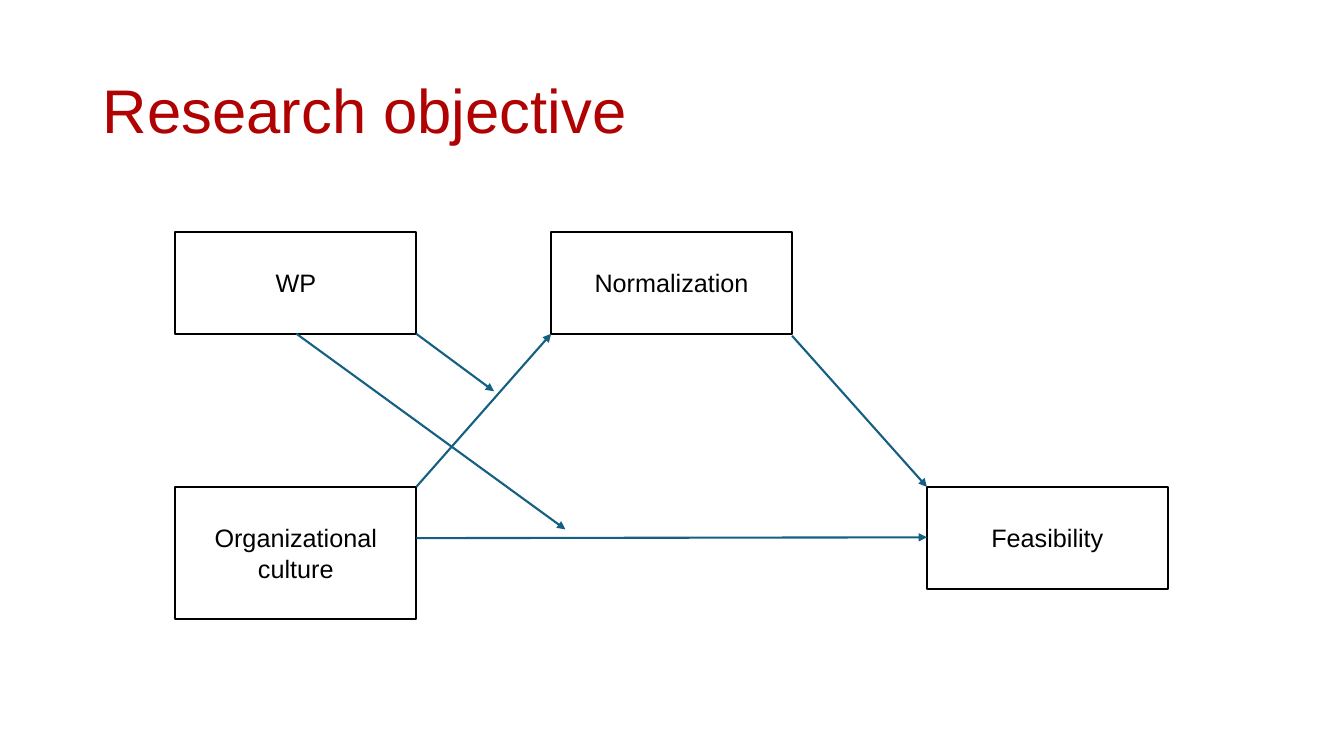
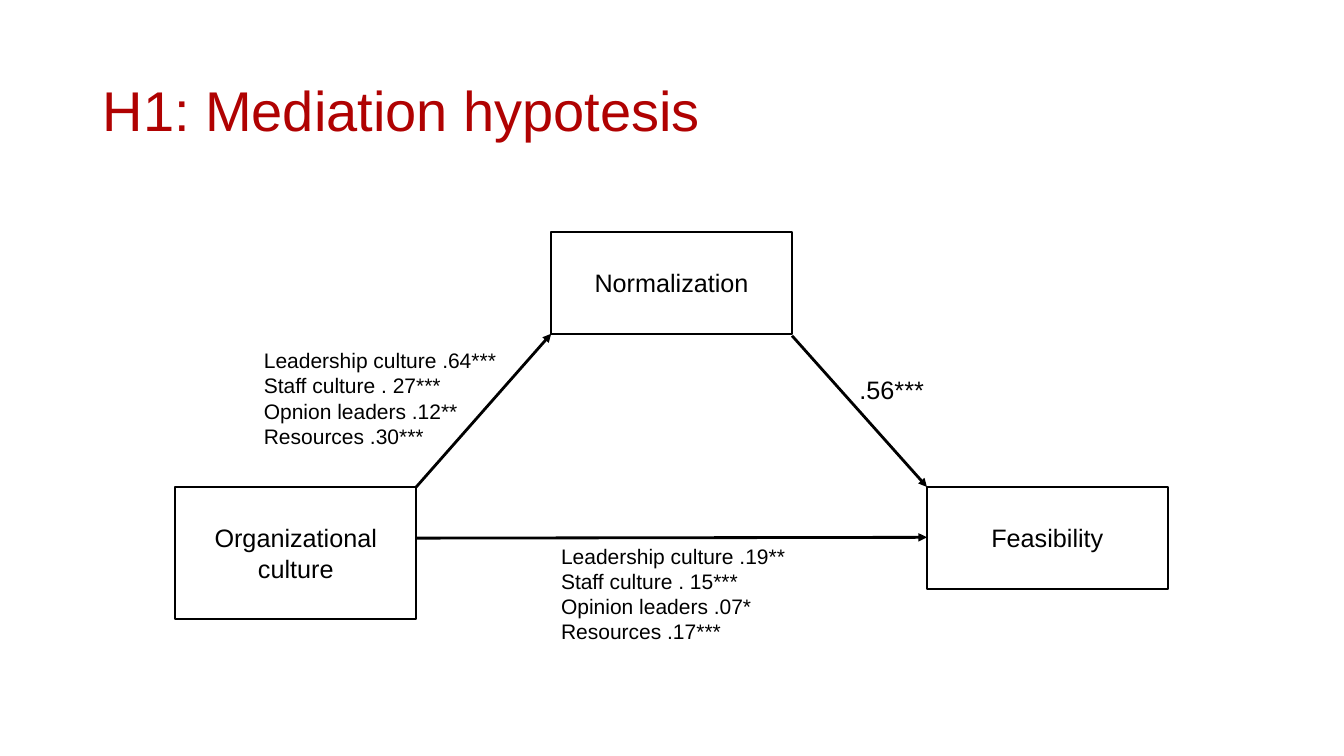
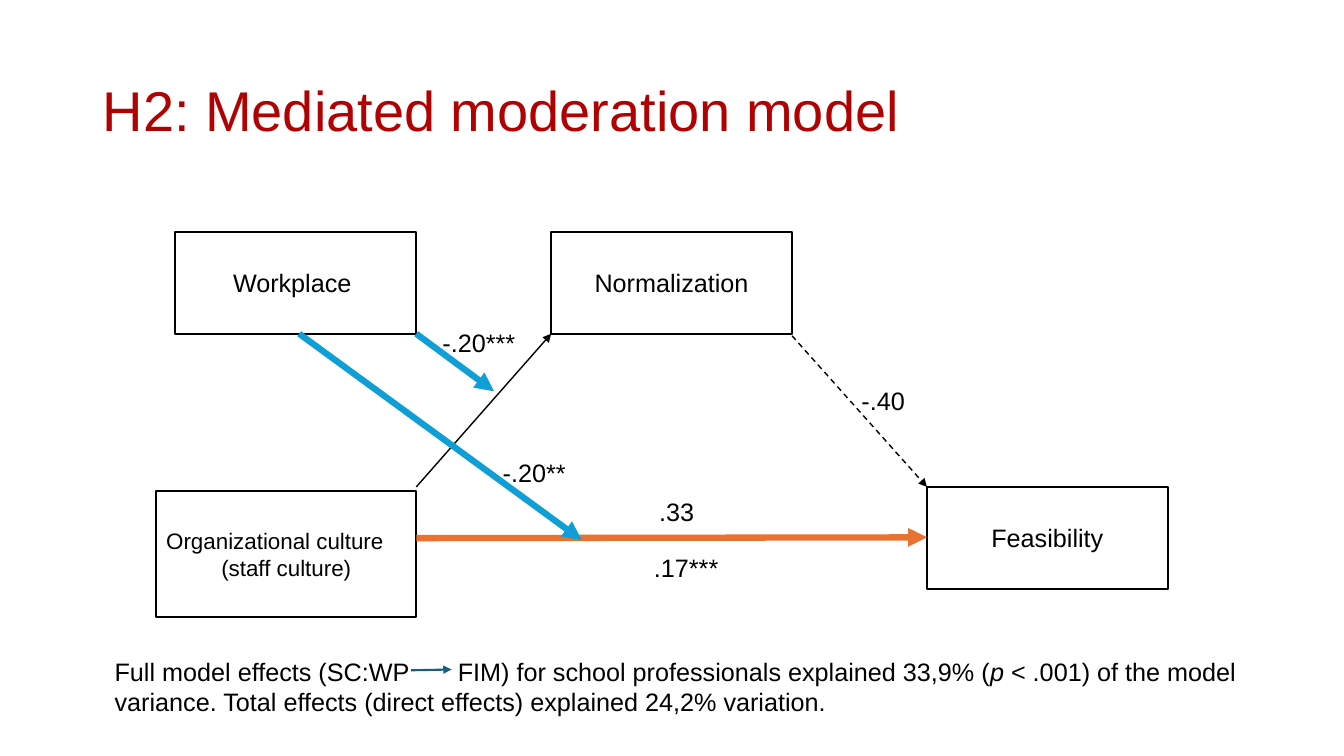
from lxml.etree import SubElement
from pptx import Presentation
from pptx.dml.color import RGBColor
from pptx.enum.dml import MSO_LINE
from pptx.enum.shapes import MSO_CONNECTOR, MSO_SHAPE
from pptx.enum.text import MSO_ANCHOR, PP_ALIGN
from pptx.oxml.ns import qn
from pptx.util import Cm, Pt

FONT = "Arial"
RED, BLACK, WHITE = "B00202", "000000", "FFFFFF"
TEAL, BLUE, ORANGE = "156082", "0F9ED5", "E97132"

TITLE_FRAME = (2.34, 1.02, 29.21, 3.68)
LEFT, STEP, NODE_WIDTH, NODE_HEIGHT = 4.42, 9.47, 6.07, 2.57
TOP_ROW, BOTTOM_ROW = 5.84, 12.27
COLUMNS = [LEFT + STEP * column for column in range(3)]
ROW_BOTTOM = TOP_ROW + NODE_HEIGHT
LEFT_EDGE = LEFT + NODE_WIDTH

NORMALIZATION = ("Normalization", (COLUMNS[1], TOP_ROW, NODE_WIDTH, NODE_HEIGHT))
FEASIBILITY = ("Feasibility", (COLUMNS[2], BOTTOM_ROW, NODE_WIDTH, NODE_HEIGHT))
CULTURE = ("Organizational culture", (LEFT, BOTTOM_ROW, NODE_WIDTH, 3.33))
WORKPLACE_FRAME = (LEFT, TOP_ROW, NODE_WIDTH, NODE_HEIGHT)
STAFF_FRAME = (3.94, 12.37, 6.55, 3.18)

TO_MEDIATOR = ((LEFT_EDGE, BOTTOM_ROW), (COLUMNS[1], ROW_BOTTOM))
FROM_MEDIATOR = ((COLUMNS[1] + NODE_WIDTH, 8.46), (COLUMNS[2], BOTTOM_ROW))
DIRECT = ((LEFT_EDGE, 13.56), (COLUMNS[2], 13.54))
MODERATION = ((LEFT_EDGE, ROW_BOTTOM), (12.45, 9.86))

THIN = {"color": TEAL, "width": 1.5}
STRONG = {"color": BLACK, "width": 2}
FINE = {"color": BLACK, "width": 1}
THICK_BLUE = {"color": BLUE, "width": 4.5}
THICK_ORANGE = {"color": ORANGE, "width": 4.5}

MEDIATOR_EFFECTS = [
    "Leadership culture .64***",
    "Staff culture . 27***",
    "Opnion leaders .12**",
    "Resources .30***",
]
DIRECT_EFFECTS = [
    "Leadership culture .19**",
    "Staff culture . 15***",
    "Opinion leaders .07*",
    "Resources .17***",
]
MODEL_NOTE = [[
    ("Full model effects (SC:WP\tFIM) for school professionals explained 33,9% (", False),
    ("p", True),
    (" < .001) of the model variance. Total effects (direct effects) "
     "explained 24,2% variation.", False),
]]

SLIDES = [
    {
        "title": ("Research objective", 44),
        "nodes": [NORMALIZATION, ("WP", WORKPLACE_FRAME), CULTURE, FEASIBILITY],
        "arrows": [
            (TO_MEDIATOR, THIN),
            (FROM_MEDIATOR, THIN),
            (DIRECT, THIN),
            (MODERATION, THIN),
            (((7.47, ROW_BOTTOM), (14.25, 13.34)), THIN),
        ],
        "labels": [],
    },
    {
        "title": ("H1: Mediation hypotesis", 40),
        "nodes": [NORMALIZATION, CULTURE, FEASIBILITY],
        "arrows": [(TO_MEDIATOR, STRONG), (FROM_MEDIATOR, STRONG), (DIRECT, STRONG)],
        "labels": [
            (MEDIATOR_EFFECTS, (6.4, 8.64, 8, 3.45), {"size": 15}),
            (".56***", (21.41, 9.32, 3.07, 1.02), {}),
            (DIRECT_EFFECTS, (COLUMNS[1], 13.56, 8, 3.45), {"size": 15}),
        ],
    },
    {
        "title": ("H2: Mediated moderation model", 40),
        "nodes": [
            NORMALIZATION,
            ("Workplace ", WORKPLACE_FRAME),
            (["Organizational culture", "(staff culture)"], STAFF_FRAME,
             {"size": 16, "aligns": [PP_ALIGN.LEFT, PP_ALIGN.CENTER]}),
            FEASIBILITY,
        ],
        "arrows": [
            (TO_MEDIATOR, FINE),
            (FROM_MEDIATOR, {**FINE, "dash": MSO_LINE.DASH}),
            (DIRECT, THICK_ORANGE),
            (MODERATION, THICK_BLUE),
            (((7.54, ROW_BOTTOM), (14.66, 13.61)), THICK_BLUE),
            (((10.36, 16.89), (11.38, 16.87)), THIN),
        ],
        "labels": [
            ("-.40", (21.46, 9.58, 3.07, 1.02), {}),
            (".17***", (16.23, 13.79, 3.07, 1.02), {}),
            ("-.20***", (10.9, 8.13, 3.07, 1.02), {}),
            ("-.20**", (12.42, 11.4, 3.07, 1.02), {}),
            (".33", (16.36, 12.37, 3.07, 1.02), {}),
            (MODEL_NOTE, (2.64, 16.41, 30.86, 1.8), {"tab": 8.65}),
        ],
    },
]


def rgb(color):
    return RGBColor.from_string(color)


def lengths(values):
    return [Cm(round(value, 2)) for value in values]


def write(shape, text, size=18, color=BLACK, aligns=(PP_ALIGN.LEFT,),
          anchor=MSO_ANCHOR.TOP, spacing=None, tab=None):
    frame = shape.text_frame
    frame.word_wrap = True
    frame.vertical_anchor = anchor
    lines = [text] if isinstance(text, str) else text
    for index, line in enumerate(lines):
        paragraph = frame.add_paragraph() if index else frame.paragraphs[0]
        paragraph.alignment = aligns[index % len(aligns)]
        if spacing:
            paragraph.line_spacing = spacing
        if tab:
            properties = paragraph._p.get_or_add_pPr()
            stops = SubElement(properties, qn("a:tabLst"))
            SubElement(stops, qn("a:tab"), pos=str(Cm(tab)), algn="l")
        for content, italic in [(line, False)] if isinstance(line, str) else line:
            run = paragraph.add_run()
            run.text = content
            run.font.name = FONT
            run.font.size = Pt(size)
            run.font.italic = italic
            run.font.color.rgb = rgb(color)


def add_text(slide, text, frame, **text_format):
    write(slide.shapes.add_textbox(*lengths(frame)), text, **text_format)


def add_node(slide, text, frame, text_format=None):
    shape = slide.shapes.add_shape(MSO_SHAPE.RECTANGLE, *lengths(frame))
    shape.shadow.inherit = False
    shape.fill.solid()
    shape.fill.fore_color.rgb = rgb(WHITE)
    shape.line.color.rgb = rgb(BLACK)
    shape.line.width = Pt(1.5)
    write(shape, text, **{"aligns": [PP_ALIGN.CENTER], "anchor": MSO_ANCHOR.MIDDLE,
                          **(text_format or {})})


def add_arrow(slide, start, end, color, width, dash=None):
    arrow = slide.shapes.add_connector(MSO_CONNECTOR.STRAIGHT, *lengths(start + end))
    arrow.line.color.rgb = rgb(color)
    arrow.line.width = Pt(width)
    if dash:
        arrow.line.dash_style = dash
    SubElement(arrow.line._get_or_add_ln(), qn("a:tailEnd"), type="triangle")
    SubElement(arrow._element.spPr, qn("a:effectLst"))


def main():
    presentation = Presentation()
    presentation.slide_width, presentation.slide_height = Cm(33.87), Cm(19.05)
    for content in SLIDES:
        slide = presentation.slides.add_slide(presentation.slide_layouts[6])
        title, size = content["title"]
        add_text(slide, title, TITLE_FRAME, size=size, color=RED,
                 anchor=MSO_ANCHOR.MIDDLE, spacing=0.9)
        for node in content["nodes"]:
            add_node(slide, *node)
        for (start, end), style in content["arrows"]:
            add_arrow(slide, start, end, **style)
        for text, frame, text_format in content["labels"]:
            add_text(slide, text, frame, **text_format)
    presentation.save("out.pptx")


if __name__ == "__main__":
    main()
